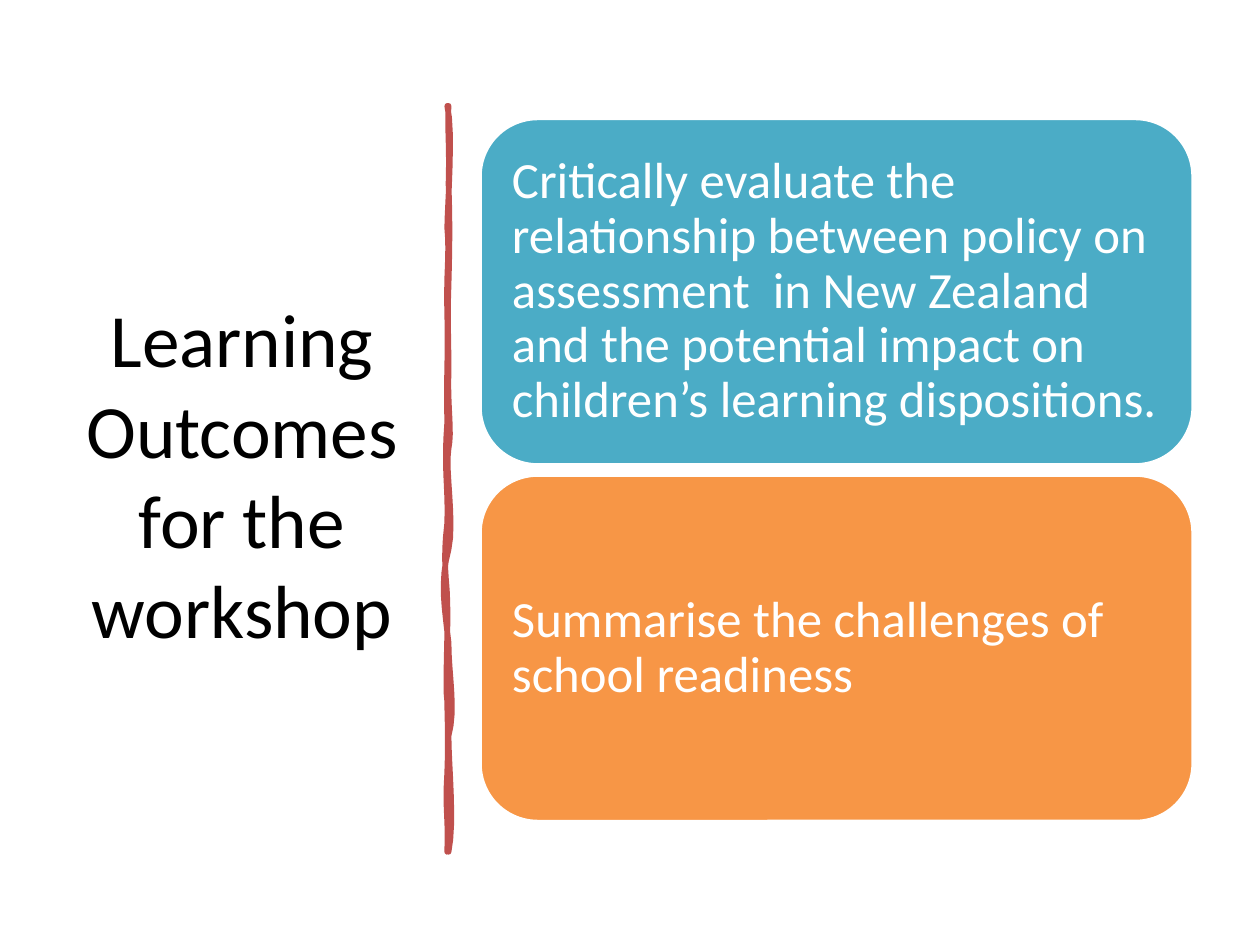
"""Build the workshop learning outcomes slide."""
import pptx
import pptx.util
import pptx.dml.color
import pptx.enum.shapes
import pptx.enum.text

Inches, Pt = pptx.util.Inches, pptx.util.Pt
PP_ALIGN = pptx.enum.text.PP_ALIGN


def rgb(value):
    return pptx.dml.color.RGBColor.from_string(value)


def write(tf, text, size, color, align):
    tf.word_wrap = True
    tf.vertical_anchor = pptx.enum.text.MSO_ANCHOR.MIDDLE
    p = tf.paragraphs[0]
    p.alignment = align
    r = p.add_run()
    r.text = text
    r.font.name = "Calibri"
    r.font.size = Pt(size)
    r.font.color.rgb = rgb(color)
    return p


prs = pptx.Presentation()
prs.slide_width, prs.slide_height = Inches(10), Inches(7.5)
s = prs.slides.add_slide(prs.slide_layouts[6])

title = s.shapes.add_textbox(Inches(0.52), Inches(0.7), Inches(2.8), Inches(6.11))
write(title.text_frame, "Learning Outcomes for the workshop", 43, "000000", PP_ALIGN.CENTER)

start = (3.56, 0.84)
curves = [
    [(3.55, 1.03), (3.57, 1.16), (3.56, 1.46)],
    [(3.57, 1.74), (3.57, 1.91), (3.56, 2.26)],
    [(3.55, 2.58), (3.56, 2.62), (3.56, 2.94)],
    [(3.55, 3.25), (3.59, 3.42), (3.56, 3.56)],
    [(3.53, 3.72), (3.61, 4.14), (3.56, 4.36)],
    [(3.49, 4.62), (3.53, 4.83), (3.56, 5.1)],
    [(3.56, 5.35), (3.62, 5.63), (3.56, 5.84)],
    [(3.56, 6.06), (3.61, 6.53), (3.56, 6.76)],
    [(3.56, 6.75), (3.55, 6.76), (3.55, 6.76)],
    [(3.56, 6.45), (3.53, 6.44), (3.55, 6.13)],
    [(3.56, 5.83), (3.55, 5.7), (3.55, 5.57)],
    [(3.53, 5.46), (3.56, 4.94), (3.55, 4.77)],
    [(3.55, 4.62), (3.51, 4.47), (3.55, 4.15)],
    [(3.56, 3.86), (3.52, 3.73), (3.55, 3.35)],
    [(3.54, 3), (3.56, 2.79), (3.55, 2.5)],
    [(3.54, 2.16), (3.57, 2.03), (3.55, 1.81)],
    [(3.55, 1.65), (3.6, 1.04), (3.55, 0.84)],
]
steps = 8
points = []
pen = start
for c1, c2, end in curves:
    for i in range(1, steps + 1):
        t = i / steps
        points.append([
            Inches((1 - t) ** 3 * a + 3 * (1 - t) ** 2 * t * b + 3 * (1 - t) * t ** 2 * c + t ** 3 * d)
            for a, b, c, d in zip(pen, c1, c2, end)
        ])
    pen = end
builder = s.shapes.build_freeform(Inches(start[0]), Inches(start[1]))
builder.add_line_segments(points, close=True)
divider = builder.convert_to_shape()
divider.shadow.inherit = False
divider.fill.solid()
divider.fill.fore_color.rgb = rgb("C0504D")
divider.line.color.rgb = rgb("C0504D")
divider.line.width = Pt(3.25)

outcomes = [
    ("4BACC6", "Critically evaluate the relationship between policy on assessment  in New Zealand "
               "and the potential impact on children’s learning dispositions."),
    ("F79646", "Summarise the challenges of school readiness"),
]
for i, (color, text) in enumerate(outcomes):
    sp = s.shapes.add_shape(pptx.enum.shapes.MSO_SHAPE.ROUNDED_RECTANGLE,
                            Inches(3.81), Inches(0.94 + i * 2.83), Inches(5.66), Inches(2.75))
    sp.shadow.inherit = False
    sp.fill.solid()
    sp.fill.fore_color.rgb = rgb(color)
    sp.line.color.rgb = rgb("FFFFFF")
    sp.line.width = Pt(2)
    tf = sp.text_frame
    tf.margin_left = tf.margin_right = tf.margin_top = tf.margin_bottom = Inches(0.12)
    p = write(tf, text, 29, "FFFFFF", PP_ALIGN.LEFT)
    p.line_spacing = 0.9

prs.save("out.pptx")
